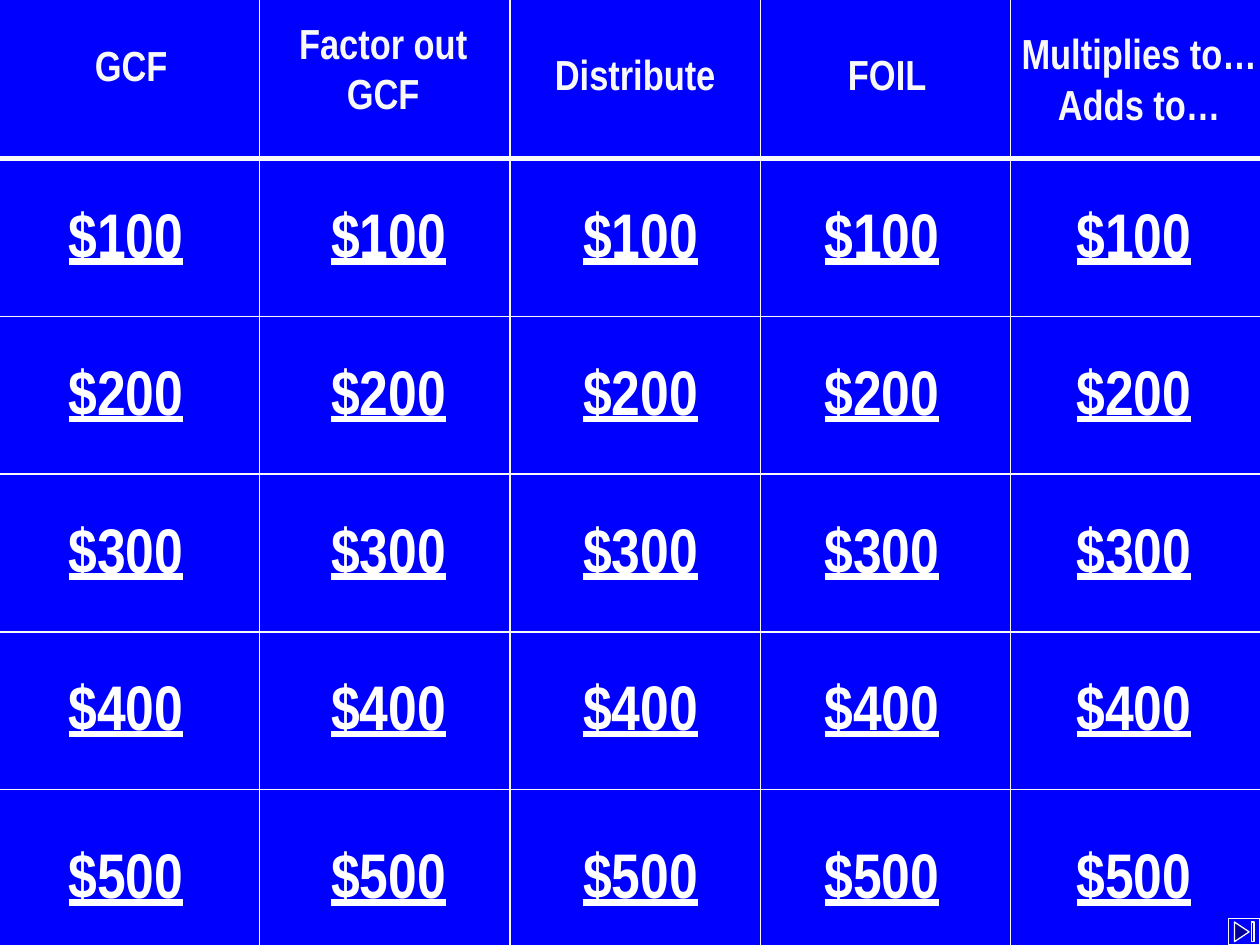
import dataclasses

import lxml.etree
import pptx
import pptx.dml.color
import pptx.enum.shapes
import pptx.enum.text
import pptx.oxml.ns
import pptx.util

Pt = pptx.util.Pt
RGB = pptx.dml.color.RGBColor
Anchor = pptx.enum.text.MSO_ANCHOR


@dataclasses.dataclass(frozen=True)
class Theme:
    board: RGB = RGB(0x00, 0x00, 0xFF)
    rule: RGB = RGB(0xF8, 0xF8, 0xF8)
    category: RGB = RGB(0xF8, 0xF8, 0xF8)
    price: RGB = RGB(0xFF, 0xFF, 0xFF)
    font: str = "Arial Narrow"
    category_size: float = 24
    price_size: float = 36
    thin: float = 0.75
    thick: float = 3


class Board:
    def __init__(self, slide, theme):
        self.slide = slide
        self.theme = theme
        fill = slide.background.fill
        fill.solid()
        fill.fore_color.rgb = theme.board
        self.grid = slide.shapes.add_group_shape()

    def line(self, x1, y1, x2, y2, weight):
        sp = self.grid.shapes.add_connector(
            pptx.enum.shapes.MSO_CONNECTOR.STRAIGHT, Pt(x1), Pt(y1), Pt(x2), Pt(y2))
        sp.line.color.rgb = self.theme.rule
        sp.line.width = Pt(weight)
        lxml.etree.SubElement(sp._element.spPr, pptx.oxml.ns.qn("a:effectLst"))

    def text(self, text, x, y, w, h, size, color, anchor, underline=None):
        sp = self.slide.shapes.add_textbox(Pt(x), Pt(y), Pt(w), Pt(h))
        tf = sp.text_frame
        tf.word_wrap = True
        tf.auto_size = pptx.enum.text.MSO_AUTO_SIZE.SHAPE_TO_FIT_TEXT
        tf.vertical_anchor = anchor
        tf.text = text
        for p in tf.paragraphs:
            p.alignment = pptx.enum.text.PP_ALIGN.CENTER
            for r in p.runs:
                r.font.name = self.theme.font
                r.font.size = Pt(size)
                r.font.bold = True
                r.font.underline = underline
                r.font.color.rgb = color

    def category(self, text, x, y, h):
        self.text(text, x, y, 150, h, self.theme.category_size,
                  self.theme.category, Anchor.MIDDLE)

    def price(self, amount, x, y):
        self.text(f"${amount}", x, y, 144, 50.4, self.theme.price_size,
                  self.theme.price, Anchor.TOP, underline=True)

    def end_button(self, x, y, w, h):
        sp = self.slide.shapes.add_shape(
            pptx.enum.shapes.MSO_SHAPE.ACTION_BUTTON_END, Pt(x), Pt(y), Pt(w), Pt(h))
        sp.shadow.inherit = False
        sp.fill.solid()
        sp.fill.fore_color.rgb = self.theme.board
        sp.line.color.rgb = self.theme.rule
        sp.line.width = Pt(self.theme.thin)


def main():
    width, height = 720, 540
    prs = pptx.Presentation()
    prs.slide_width, prs.slide_height = Pt(width), Pt(height)
    theme = Theme()
    board = Board(prs.slides.add_slide(prs.slide_layouts[6]), theme)

    for i in range(4):
        x = 148.5 + 143 * i
        board.line(x, 0, x, height, theme.thin)
    for i in range(5):
        y = 90.5 + 90.2 * i
        board.line(0, y, width, y, theme.thin if i else theme.thick)

    categories = [
        ("GCF", 19, 36),
        ("Factor out GCF", 6, 65.5),
        ("Distribute", 24, 36),
        ("FOIL", 24, 36),
        ("Multiplies to…\nAdds to…", 12, 65.5),
    ]
    for i, (text, y, h) in enumerate(categories):
        board.category(text, 144 * i, y, h)

    price_lefts = [0, 150, 294, 432, 576]
    price_tops = {100: 108, 200: 198, 300: 288, 400: 378, 500: 474}
    for amount, y in price_tops.items():
        for x in price_lefts:
            board.price(amount, x, y)

    board.end_button(702, 525, 18, 15)
    prs.save("out.pptx")


if __name__ == "__main__":
    main()
